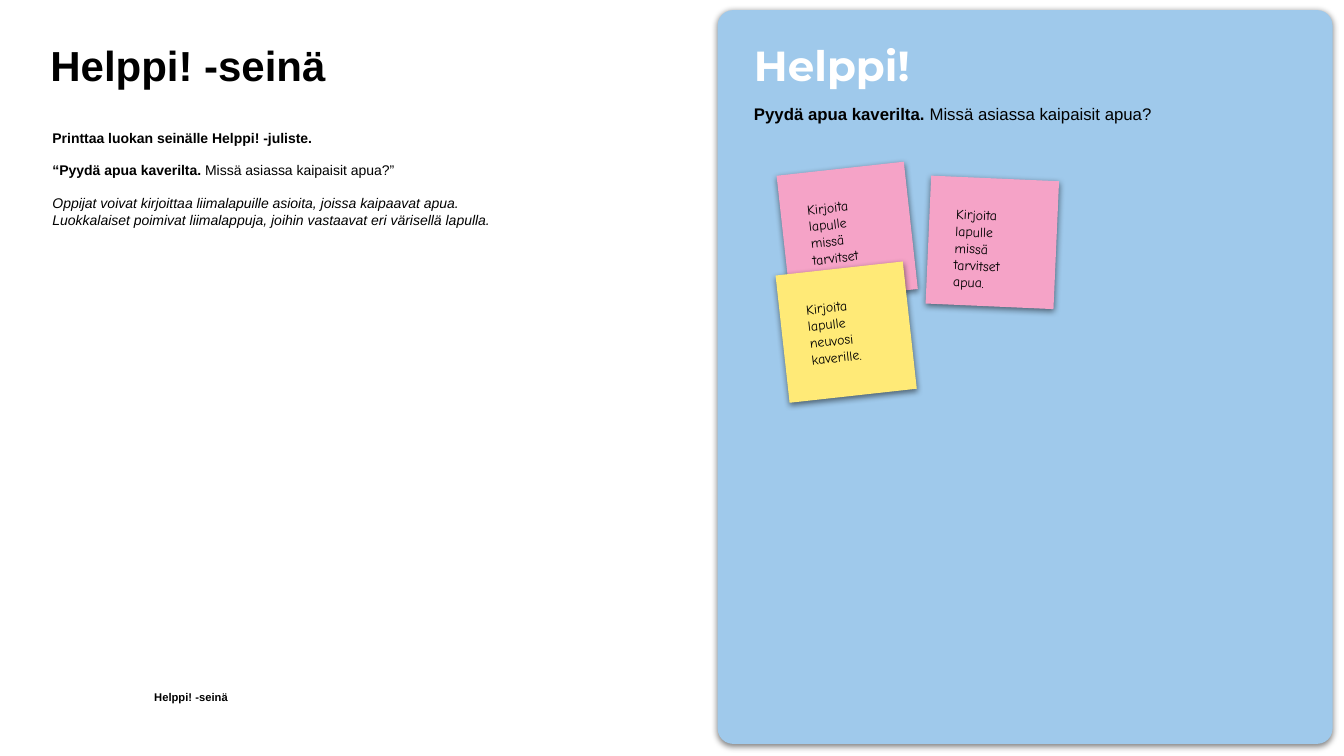
from dataclasses import dataclass

from lxml import etree
from pptx import Presentation
from pptx import util as u
from pptx.dml.color import RGBColor
from pptx.enum import shapes, text
from pptx.oxml import ns

CELL = u.Inches(0.1)
COLS, ROWS = 133.33, 75


@dataclass(frozen=True)
class Theme:
    ink: str = "000000"
    white: str = "FFFFFF"
    panel: str = "9FC9EB"
    ask: str = "F5A3C7"
    answer: str = "FFEA77"
    sans: str = "Arial"
    display: str = "Montserrat"
    hand: str = "Comic Neue"
    heading: float = 30
    lead: float = 12
    body: float = 10
    footer: float = 8


T = Theme()
BOLD, PLAIN, ITALIC = {"bold": True}, {"bold": False}, {"italic": True, "bold": True}

TITLE = [[("Helppi! -seinä", BOLD)]]
BODY = [
    [("Printtaa luokan seinälle Helppi! -juliste.", BOLD)],
    [("“Pyydä apua kaverilta. ", BOLD), ("Missä asiassa kaipaisit apua?”", PLAIN)],
    [("Oppijat voivat kirjoittaa liimalapuille asioita, joissa kaipaavat apua. "
      "Luokkalaiset poimivat liimalappuja, joihin vastaavat eri värisellä lapulla.",
      {"bold": False, "italic": True})],
]
FOOTER = [[("Helppi! -seinä", BOLD)]]
POSTER_TITLE = [[("Helppi!", BOLD)]]
POSTER_LEAD = [[("Pyydä apua kaverilta. ", BOLD), ("Missä asiassa kaipaisit apua?", PLAIN)]]

ASK = "Kirjoita lapulle missä tarvitset apua."
ANSWER = "Kirjoita lapulle neuvosi kaverille."
NOTES = [
    (98.45, 24.05, 2.5, T.ask, ASK),
    (84.05, 23.05, -6.3, T.ask, ASK),
    (83.95, 32.95, -6.3, T.answer, ANSWER),
]
NOTE_SIDE = 12.7
NOTE_TEXT = (9.4, 9)

PANEL = (71.2, 1, 61, 72.8)
POSTER_LEFT = 74.8
HEADING_TOP = 4.5
BODY_GAP = 11.4


def place(sp, frame):
    for name, cells in zip(("left", "top", "width", "height"), frame):
        setattr(sp, name, round(cells * CELL))


def centred(x, y, w, h):
    return x - w / 2, y - h / 2, w, h


def write(sp, paragraphs, font, size, color=T.ink, spacing=0.9, gap=0, insets=(0, 0, 0, 0)):
    tf = sp.text_frame
    frame_format = {
        "word_wrap": True,
        "auto_size": text.MSO_AUTO_SIZE.NONE,
        "vertical_anchor": text.MSO_ANCHOR.TOP,
    }
    for side, inset in zip(("left", "top", "right", "bottom"), insets):
        frame_format[f"margin_{side}"] = u.Inches(inset)
    for name, value in frame_format.items():
        setattr(tf, name, value)
    for i, runs in enumerate(paragraphs):
        p = tf.add_paragraph() if i else tf.paragraphs[0]
        pPr = p._p.get_or_add_pPr()
        pPr.set("marL", "0")
        pPr.set("indent", "0")
        etree.SubElement(pPr, ns.qn("a:buNone"))
        paragraph_format = {
            "alignment": text.PP_ALIGN.LEFT,
            "line_spacing": spacing,
            "space_before": u.Pt(gap if i else 0),
            "space_after": u.Pt(0),
        }
        for name, value in paragraph_format.items():
            setattr(p, name, value)
        for words, style in runs:
            r = p.add_run()
            r.text = words
            for name, value in {"name": font, "size": u.Pt(size), **style}.items():
                setattr(r.font, name, value)
            r.font.color.rgb = RGBColor.from_string(color)


def add_text(s, frame, paragraphs, font, size, rotation=0, **options):
    sp = s.shapes.add_textbox(0, 0, 0, 0)
    place(sp, frame)
    sp.rotation = rotation
    write(sp, paragraphs, font, size, **options)


def add_card(s, kind, frame, color, rotation=0):
    sp = s.shapes.add_shape(kind, 0, 0, 0, 0)
    place(sp, frame)
    sp.rotation = rotation
    sp.fill.solid()
    sp.fill.fore_color.rgb = RGBColor.from_string(color)
    sp.line.fill.background()
    sp.shadow.inherit = False
    effects = sp._element.spPr.find(ns.qn("a:effectLst"))
    shadow = etree.SubElement(effects, ns.qn("a:outerShdw"), blurRad=str(u.Pt(4.5)),
                              dist=str(u.Pt(1.5)), dir="5400000", algn="bl", rotWithShape="0")
    tint = etree.SubElement(shadow, ns.qn("a:srgbClr"), val=T.ink)
    etree.SubElement(tint, ns.qn("a:alpha"), val="50000")
    return sp


def main():
    prs = Presentation()
    prs.slide_width, prs.slide_height = round(COLS * CELL), ROWS * CELL
    s = prs.slides.add_slide(prs.slide_layouts[1])

    title, body = s.shapes.title, s.placeholders[1]
    place(title, (5, HEADING_TOP, 121.9, 3.6))
    write(title, TITLE, T.sans, T.heading)
    place(body, (5.2, 12.8, 45.3, 49.9))
    write(body, BODY, T.sans, T.body, spacing=1.0, gap=BODY_GAP)
    add_text(s, (15.1, 68.6, 41, 2.2), FOOTER, T.sans, T.footer, insets=(0.02, 0, 0, 0))

    panel = add_card(s, shapes.MSO_SHAPE.ROUNDED_RECTANGLE, PANEL, T.panel)
    panel.adjustments[0] = 0.025
    add_text(s, (POSTER_LEFT, HEADING_TOP, 32.8, 4.4), POSTER_TITLE, T.display, T.heading,
             color=T.white)
    add_text(s, (POSTER_LEFT, 10.5, 47.1, 6.7), POSTER_LEAD, T.sans, T.lead)

    for x, y, angle, color, words in NOTES:
        add_card(s, shapes.MSO_SHAPE.RECTANGLE, centred(x, y, NOTE_SIDE, NOTE_SIDE), color, angle)
        add_text(s, centred(x, y, *NOTE_TEXT), [[(words, PLAIN)]], T.hand, T.body, angle,
                 spacing=1.0, insets=(0.1,) * 4)

    prs.save("out.pptx")


if __name__ == "__main__":
    main()
